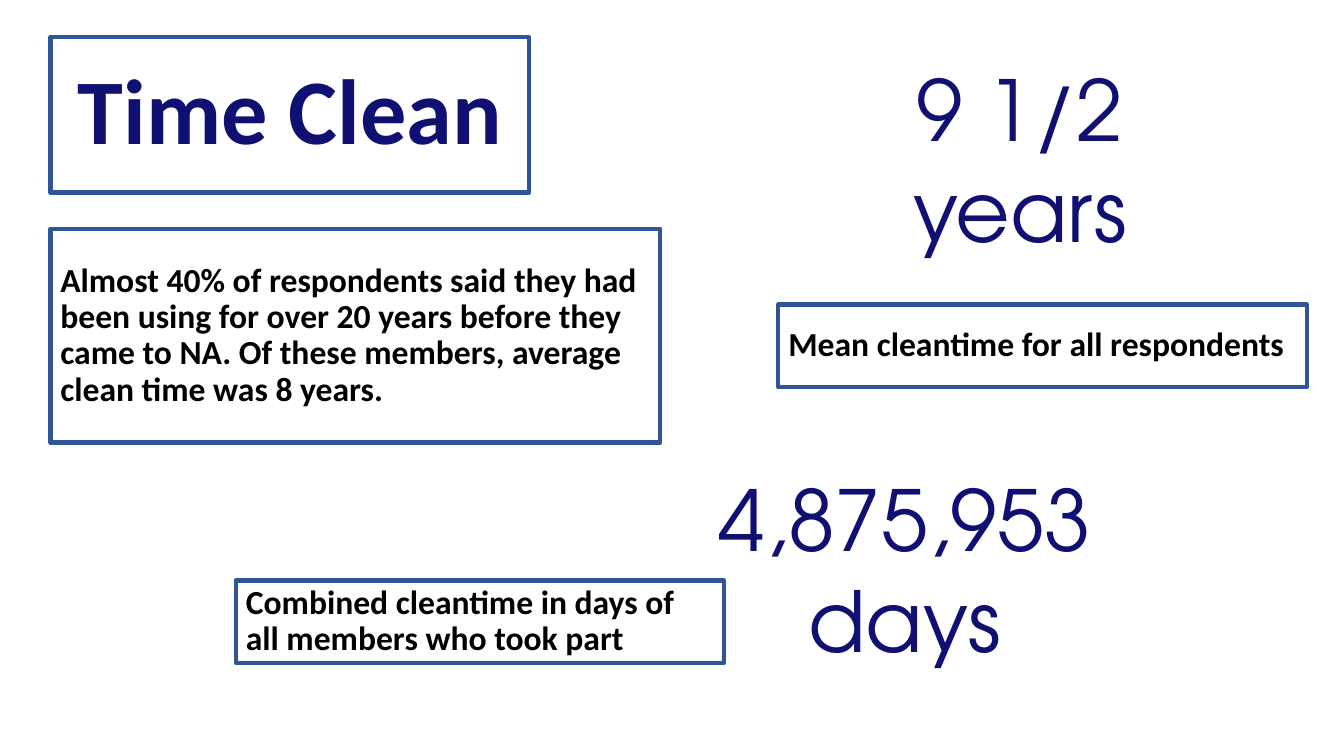
from pptx import Presentation
from pptx.dml.color import RGBColor
from pptx.enum.shapes import MSO_SHAPE
from pptx.enum.text import MSO_ANCHOR, PP_ALIGN
from pptx.util import Inches, Pt

RECTANGLE = MSO_SHAPE.RECTANGLE
TOP, MIDDLE = MSO_ANCHOR.TOP, MSO_ANCHOR.MIDDLE
LEFT, CENTER = PP_ALIGN.LEFT, PP_ALIGN.CENTER
TITLE_ONLY = 5


def color(hex_string):
    return RGBColor.from_string(hex_string)


def write(shape, text, font, size, ink, bold=False, align=LEFT,
          anchor=TOP, spacing=1.0):
    frame = shape.text_frame
    frame.word_wrap = True
    frame.vertical_anchor = anchor
    para = frame.paragraphs[0]
    para.alignment = align
    para.line_spacing = spacing
    span = para.add_run()
    span.text = text
    span.font.name = font
    span.font.size = Pt(size)
    span.font.bold = bold
    span.font.color.rgb = color(ink)


class CleanTimeSlide:
    NAVY, BORDER, BLACK = "0F1071", "2F5597", "000000"
    BODY_FONT, FIGURE_FONT = "Calibri", "TeX Gyre Adventor"

    def __init__(self, deck):
        self.page = deck.slides.add_slide(deck.slide_layouts[TITLE_ONLY])

    def outline(self, box):
        box.fill.background()
        box.line.color.rgb = color(self.BORDER)
        box.line.width = Pt(3)

    def title(self, text, left, top, width, height):
        box = self.page.shapes.title
        box.left, box.top = Inches(left), Inches(top)
        box.width, box.height = Inches(width), Inches(height)
        self.outline(box)
        write(box, text, self.BODY_FONT, 66, self.NAVY, bold=True,
              align=CENTER, anchor=MIDDLE, spacing=0.9)

    def caption(self, text, left, top, width, height):
        box = self.page.shapes.add_shape(
            RECTANGLE, Inches(left), Inches(top), Inches(width), Inches(height))
        box.shadow.inherit = False
        self.outline(box)
        write(box, text, self.BODY_FONT, 24, self.BLACK, bold=True,
              anchor=MIDDLE, spacing=0.9)

    def figure(self, text, left, top, width, height):
        box = self.page.shapes.add_textbox(
            Inches(left), Inches(top), Inches(width), Inches(height))
        write(box, text, self.FIGURE_FONT, 60, self.NAVY, align=CENTER)


def main():
    deck = Presentation()
    deck.slide_width, deck.slide_height = Inches(13.33), Inches(7.5)
    slide = CleanTimeSlide(deck)

    # Title and finding
    slide.title("Time Clean", 0.5, 0.37, 4.75, 1.54)
    slide.caption("Almost 40% of respondents said they had been using for over "
                  "20 years before they came to NA. Of these members, average "
                  "clean time was 8 years.", 0.5, 2.27, 6.05, 2.12)

    # Mean clean time
    slide.caption("Mean cleantime for all respondents", 7.72, 3.02, 5.24, 0.82)
    slide.figure("9 1/2 years", 8.57, 0.52, 3.09, 2.12)

    # Combined clean time
    slide.figure("4,875,953 days", 6.81, 4.59, 4.32, 2.12)
    slide.caption("Combined cleantime in days of all members who took part",
                  2.34, 5.76, 4.84, 0.82)

    deck.save("out.pptx")


if __name__ == "__main__":
    main()
